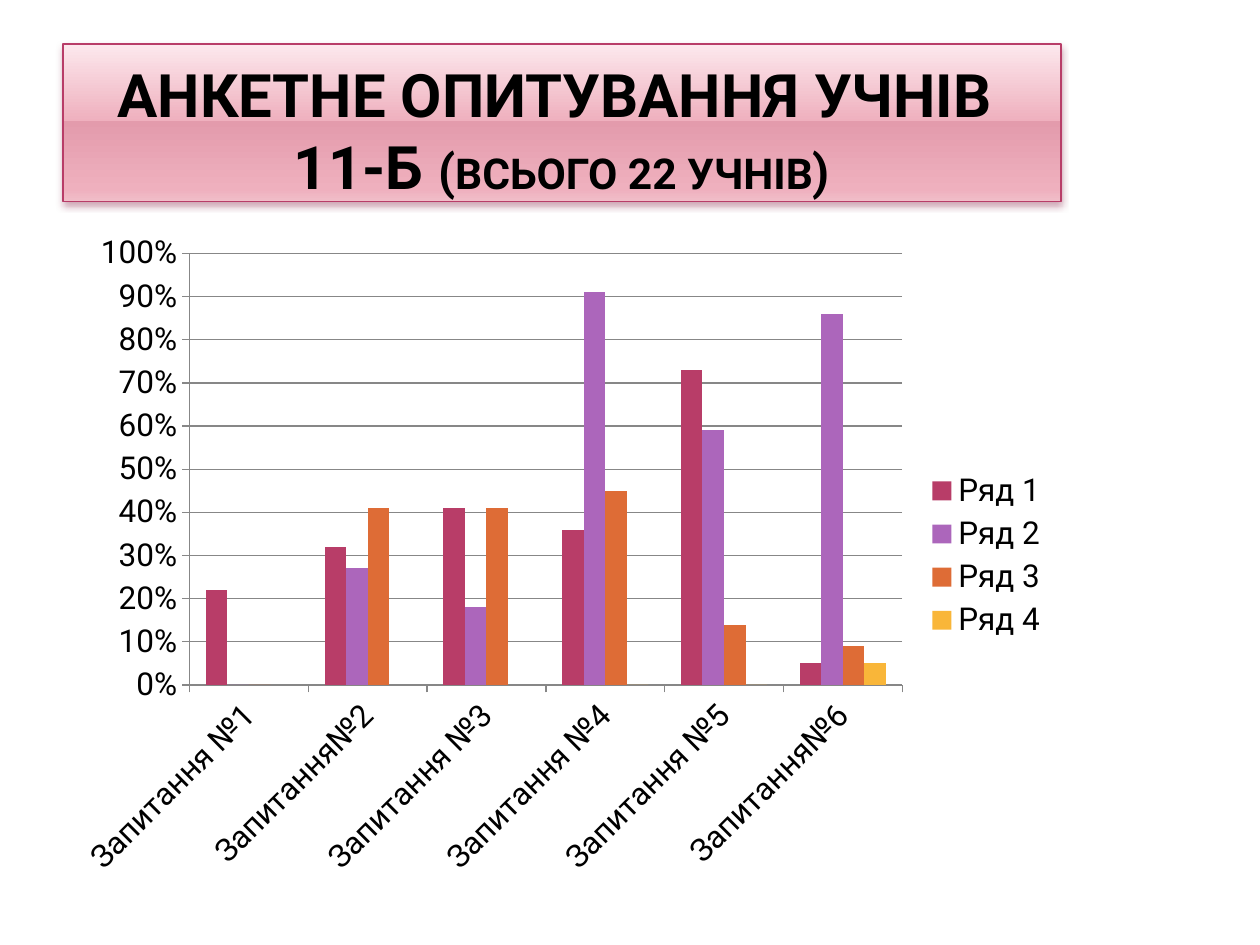
from lxml import etree
from pptx import Presentation
from pptx.chart.data import CategoryChartData
from pptx.dml.color import RGBColor
from pptx.enum.chart import XL_CHART_TYPE as ChartType
from pptx.enum.chart import XL_LEGEND_POSITION as LegendPosition
from pptx.enum.chart import XL_TICK_MARK as TickMark
from pptx.enum.shapes import MSO_SHAPE as Shape
from pptx.enum.text import MSO_ANCHOR as Anchor
from pptx.enum.text import PP_ALIGN as Align
from pptx.oxml import parse_xml
from pptx.oxml.ns import nsdecls, qn
from pptx.util import Inches, Pt

FONT = "Roboto"
BLACK = "000000"
GRID = "878787"
LEFT, WIDTH = Inches(0.5), Inches(7.92)
BANNER_STOPS = [(0, "FCE8ED"), (49, "EFB0BE"), (49, "E39BAC"), (92, "EFB0BE"), (100, "F0BEC9")]
TITLE_LINES = [
    [("АНКЕТНЕ ОПИТУВАННЯ УЧНІВ ", 34.2)],
    [("11-Б ", 34.2), ("(", 27.9), ("ВСЬОГО 22 УЧНІВ", 24.3), (")", 27.9)],
]
QUESTIONS = ["Запитання №1", "Запитання№2", "Запитання №3",
             "Запитання №4", "Запитання №5", "Запитання№6"]
SERIES = [
    ("Ряд 1", "B83D68", [0.22, 0.32, 0.41, 0.36, 0.73, 0.05]),
    ("Ряд 2", "AC66BB", [0, 0.27, 0.18, 0.91, 0.59, 0.86]),
    ("Ряд 3", "DE6C36", [0, 0.41, 0.41, 0.45, 0.14, 0.09]),
    ("Ряд 4", "F9B639", [None, None, None, 0, 0, 0.05]),
]


def color(value):
    """Turn a hex string into a colour."""
    return RGBColor.from_string(value)


def style_font(font, size, bold=False):
    """Give a font the slide's typeface and colour."""
    font.name = FONT
    font.size = Pt(size)
    font.bold = bold
    font.color.rgb = color(BLACK)


def style_line(line, value, width):
    """Set the colour and width of a line."""
    line.color.rgb = color(value)
    line.width = Pt(width)


def fill_gradient(shape, stops):
    """Fill a shape with a gradient that runs from top to bottom."""
    properties = shape.fill._xPr
    shape.fill.gradient()
    old = properties.find(qn("a:gradFill"))
    marks = "".join(
        f'<a:gs pos="{place * 1000}"><a:srgbClr val="{value}"/></a:gs>' for place, value in stops)
    properties.replace(old, parse_xml(
        f'<a:gradFill {nsdecls("a")} rotWithShape="1"><a:gsLst>{marks}</a:gsLst>'
        '<a:lin ang="5400000" scaled="0"/></a:gradFill>'))


def add_shadow(shape, value, opacity, blur, distance):
    """Put a soft shadow below a shape."""
    shape.shadow.inherit = False
    effects = shape._element.spPr.find(qn("a:effectLst"))
    shadow = etree.SubElement(effects, qn("a:outerShdw"), blurRad=str(Pt(blur)),
                              dist=str(Pt(distance)), dir="5400000", rotWithShape="0")
    tint = etree.SubElement(shadow, qn("a:srgbClr"), val=value)
    etree.SubElement(tint, qn("a:alpha"), val=str(opacity * 1000))


def add_banner(slide):
    """Add the title banner."""
    banner = slide.shapes.add_shape(Shape.RECTANGLE, LEFT, Inches(0.35), WIDTH, Inches(1.25))
    fill_gradient(banner, BANNER_STOPS)
    style_line(banner.line, "B83D68", 0.9)
    add_shadow(banner, "7F1238", 38, 4, 2)
    frame = banner.text_frame
    frame.word_wrap = True
    frame.vertical_anchor = Anchor.BOTTOM
    frame.margin_left = frame.margin_right = Inches(0.05)
    frame.margin_top = frame.margin_bottom = 0
    para = frame.paragraphs[0]
    para.alignment = Align.CENTER
    for number, line in enumerate(TITLE_LINES):
        if number:
            para.add_line_break()
        for text, size in line:
            span = para.add_run()
            span.text = text
            style_font(span.font, size, bold=True)


def style_axes(chart):
    """Format the two axes and the gridlines."""
    questions, shares = chart.category_axis, chart.value_axis
    for axis in (questions, shares):
        axis.major_tick_mark = TickMark.OUTSIDE
        axis.minor_tick_mark = TickMark.NONE
        style_line(axis.format.line, GRID, 0.75)
        style_font(axis.tick_labels.font, 18)
    labels = questions._element.find(qn("c:txPr")).find(qn("a:bodyPr"))
    labels.set("rot", "-2700000")
    shares.minimum_scale, shares.maximum_scale, shares.major_unit = 0, 1, 0.1
    shares.tick_labels.number_format = "0%"
    shares.tick_labels.number_format_is_linked = False
    shares.has_major_gridlines = True
    style_line(shares.major_gridlines.format.line, GRID, 0.75)


def add_survey_chart(slide):
    """Add the clustered columns with the survey answers."""
    data = CategoryChartData(number_format="0%")
    data.categories = QUESTIONS
    for name, _, values in SERIES:
        data.add_series(name, values)
    chart = slide.shapes.add_chart(
        ChartType.COLUMN_CLUSTERED, LEFT, Inches(1.76), WIDTH, Inches(5.3), data).chart
    chart.has_title = False
    style_font(chart.font, 18)
    chart.has_legend = True
    chart.legend.position = LegendPosition.RIGHT
    chart.legend.include_in_layout = False
    style_font(chart.legend.font, 18)
    style_axes(chart)
    plot = chart.plots[0]
    plot.gap_width = 150
    plot.overlap = 0
    plot.vary_by_categories = False
    for series, (_, value, _) in zip(plot.series, SERIES):
        series.format.fill.solid()
        series.format.fill.fore_color.rgb = color(value)


def main():
    """Build and save the slide."""
    deck = Presentation()
    deck.slide_width, deck.slide_height = Inches(10), Inches(7.5)
    slide = deck.slides.add_slide(deck.slide_layouts[6])
    add_banner(slide)
    add_survey_chart(slide)
    deck.save("out.pptx")


if __name__ == "__main__":
    main()
